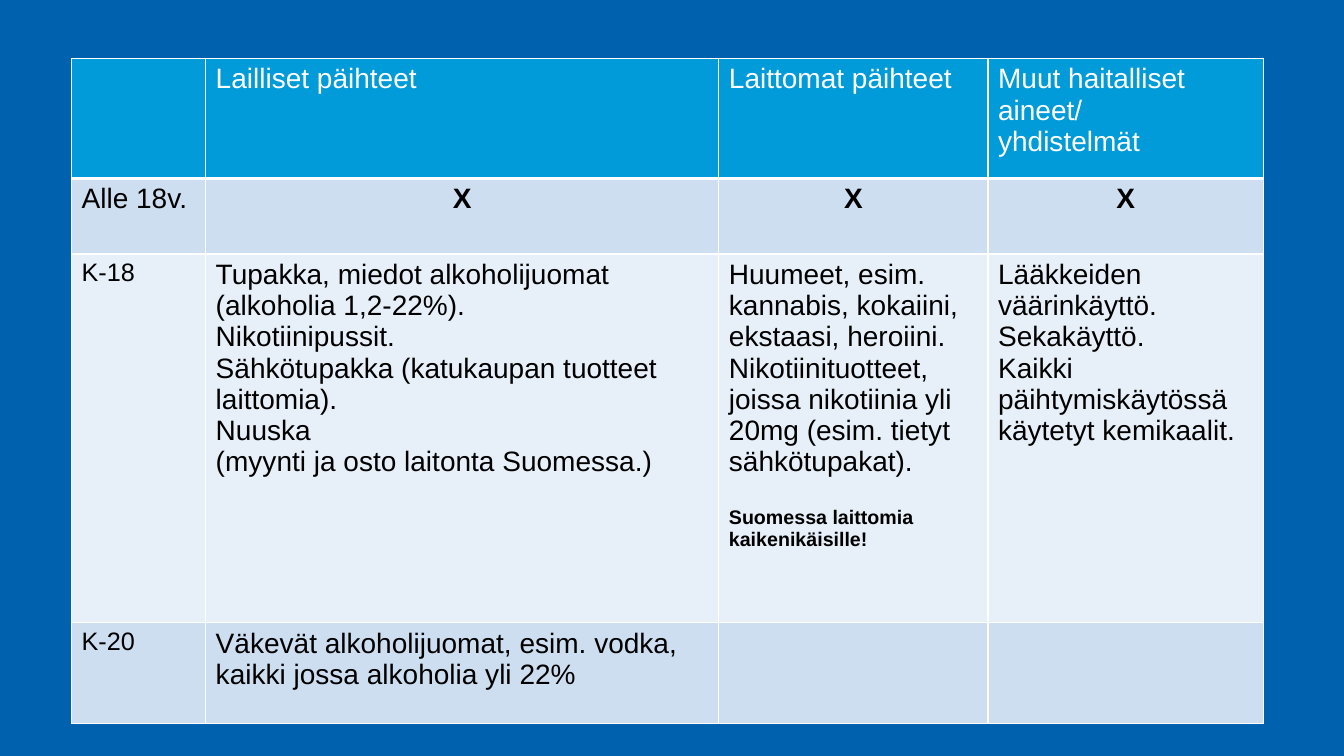
from lxml import etree
from pptx import Presentation
from pptx import util as u
from pptx.dml.color import RGBColor
from pptx.enum import text
from pptx.oxml import ns

BLUE = RGBColor(0x00, 0x62, 0xAE)
CYAN = RGBColor(0x00, 0x9B, 0xD8)
MID = RGBColor(0xCC, 0xDE, 0xF0)
PALE = RGBColor(0xE7, 0xEF, 0xF8)
WHITE = RGBColor(0xFF, 0xFF, 0xFF)
BLACK = RGBColor(0x00, 0x00, 0x00)

COLUMNS = [1.33, 5.09, 2.67, 2.73]
ROWS = [1.19, 0.75, 3.66, 1]
ROW_FILLS = [CYAN, MID, PALE, MID]

BODY = {"size": u.Pt(20), "bold": False}
AGE = {"size": u.Pt(18), "bold": False}
MARK = {"size": u.Pt(20), "bold": True}
WARNING = {"size": u.Pt(14), "bold": True}
WARNING_GAP = u.Pt(21)

CROSS = [("X", MARK)]


def body(*lines):
    return [(line, BODY) for line in lines]


CONTENT = [
    [[], body("Lailliset päihteet"), body("Laittomat päihteet"),
     body("Muut haitalliset aineet/", "yhdistelmät")],
    [body("Alle 18v."), CROSS, CROSS, CROSS],
    [[("K-18", AGE)],
     body("Tupakka, miedot alkoholijuomat (alkoholia 1,2-22%).",
          "Nikotiinipussit.",
          "Sähkötupakka (katukaupan tuotteet laittomia).",
          "Nuuska",
          "(myynti ja osto laitonta Suomessa.)"),
     body("Huumeet, esim. kannabis, kokaiini, ekstaasi, heroiini.",
          "Nikotiinituotteet, joissa nikotiinia yli 20mg (esim. tietyt sähkötupakat).")
     + [("Suomessa laittomia", WARNING), ("kaikenikäisille!", WARNING)],
     body("Lääkkeiden", "väärinkäyttö.", "Sekakäyttö.",
          "Kaikki päihtymiskäytössä", "käytetyt kemikaalit.")],
    [[("K-20", AGE)],
     body("Väkevät alkoholijuomat, esim. vodka, kaikki jossa alkoholia yli 22%"),
     [], []],
]


def add_borders(cell, bottom_width):
    """Draw white cell borders; they must precede the fill in the XML."""
    properties = cell._tc.get_or_add_tcPr()
    for index, side in enumerate(("lnL", "lnR", "lnT", "lnB")):
        width = bottom_width if side == "lnB" else 1
        border = etree.Element(ns.qn(f"a:{side}"), w=str(u.Pt(width)))
        fill = etree.SubElement(border, ns.qn("a:solidFill"))
        etree.SubElement(fill, ns.qn("a:srgbClr"), val=str(WHITE))
        properties.insert(index, border)


def write_lines(frame, lines, color):
    previous = None
    for index, (line, style) in enumerate(lines):
        paragraph = frame.add_paragraph() if index else frame.paragraphs[0]
        if style is MARK:
            paragraph.alignment = text.PP_ALIGN.CENTER
        if style is WARNING and previous is not WARNING:
            paragraph.space_before = WARNING_GAP
        run = paragraph.add_run()
        run.text = line
        for name, value in {"name": "Arial", **style}.items():
            setattr(run.font, name, value)
        run.font.color.rgb = color
        previous = style


def add_substance_table(slide, left, top):
    box = [u.Inches(n) for n in (left, top, sum(COLUMNS), sum(ROWS))]
    table = slide.shapes.add_table(len(ROWS), len(COLUMNS), *box).table
    for column, width in zip(table.columns, COLUMNS):
        column.width = u.Inches(width)
    for r, (row, height) in enumerate(zip(table.rows, ROWS)):
        row.height = u.Inches(height)
        header = r == 0
        for cell, lines in zip(row.cells, CONTENT[r]):
            cell.fill.solid()
            cell.fill.fore_color.rgb = ROW_FILLS[r]
            add_borders(cell, 3 if header else 1)
            write_lines(cell.text_frame, lines, WHITE if header else BLACK)


def main():
    deck = Presentation()
    deck.slide_width, deck.slide_height = u.Inches(13.33), u.Inches(7.5)
    slide = deck.slides.add_slide(deck.slide_layouts[6])
    slide.background.fill.solid()
    slide.background.fill.fore_color.rgb = BLUE
    add_substance_table(slide, 0.71, 0.58)
    deck.save("out.pptx")


if __name__ == "__main__":
    main()
